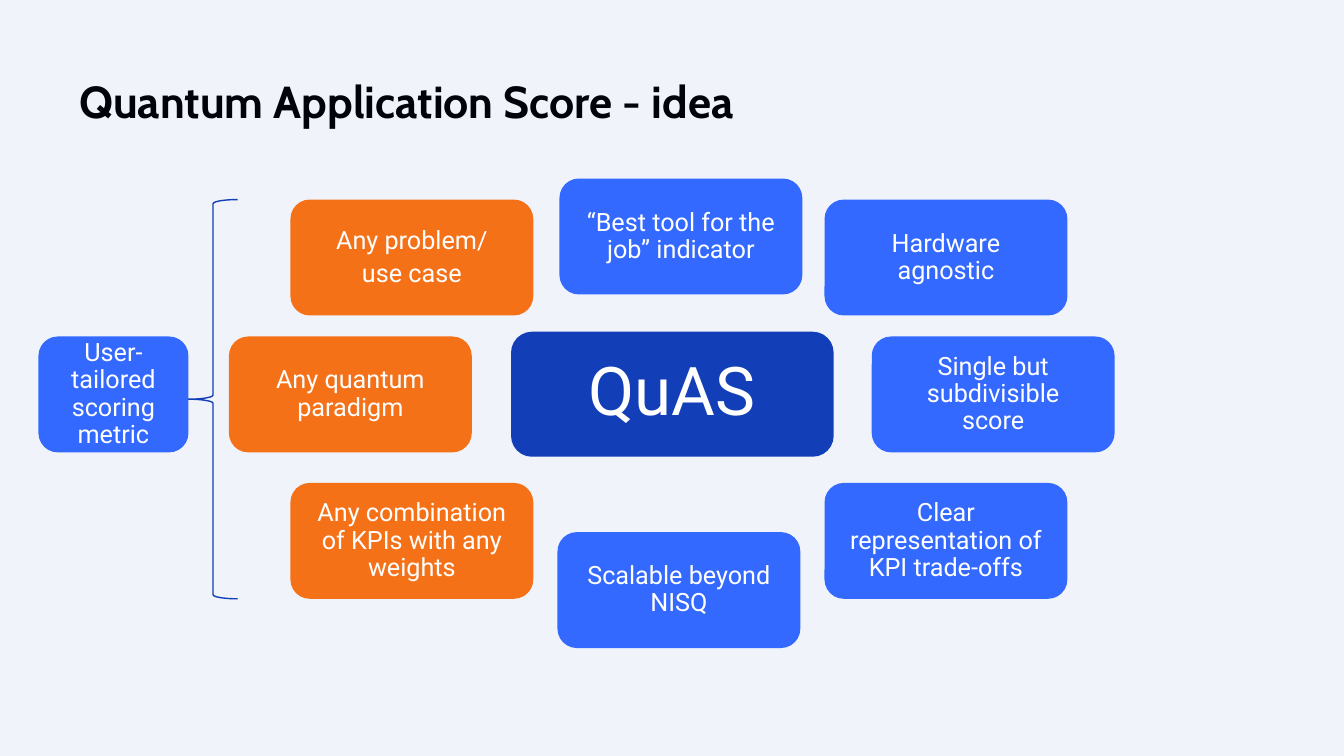
import pptx
import pptx.dml.color
import pptx.enum.shapes
import pptx.enum.text
import pptx.util

Cm = pptx.util.Cm
Pt = pptx.util.Pt
SHAPES = pptx.enum.shapes.MSO_SHAPE

BLUE, ORANGE, NAVY = "3369FF", "F57118", "123EB7"
CARD_WIDTH, CARD_HEIGHT = 6.12, 2.92
LEFT, RIGHT = 7.32, 20.78
TOP, MIDDLE, BOTTOM = 5.03, 8.48, 12.17


def color(value):
    return pptx.dml.color.RGBColor.from_string(value)


def write(box, lines, font, size, text_color, margin, bold=False):
    frame = box.text_frame
    frame.word_wrap = True
    frame.margin_left = frame.margin_right = Cm(margin)
    frame.margin_top = frame.margin_bottom = Cm(margin)
    for index, line in enumerate(lines):
        para = frame.add_paragraph() if index else frame.paragraphs[0]
        para.line_spacing = 0.9
        span = para.add_run()
        span.text = line
        span.font.name = font
        span.font.size = Pt(size)
        span.font.bold = bold
        span.font.color.rgb = color(text_color)
    return frame


deck = pptx.Presentation()
deck.slide_width, deck.slide_height = Cm(33.87), Cm(19.05)
page = deck.slides.add_slide(deck.slide_layouts[6])
page.background.fill.solid()
page.background.fill.fore_color.rgb = color("F0F3FA")

# Title
title = page.shapes.add_textbox(Cm(2), Cm(2), Cm(29.87), Cm(1.02))
write(title, ["Quantum Application Score - idea"], "Cabin", 32, "00030A", 0, True)

# Cards around the centre: lines, left, top, width, height, fill, text size
outer_cards = [
    (["Hardware agnostic"], RIGHT, TOP, BLUE),
    (["Single but subdivisible score"], 21.97, MIDDLE, BLUE),
    (["Clear representation of KPI trade-offs"], RIGHT, BOTTOM, BLUE),
    (["Scalable beyond NISQ"], 14.05, 13.41, BLUE),
    (["Any combination of KPIs with any weights"], LEFT, BOTTOM, ORANGE),
    (["Any quantum paradigm"], 5.77, MIDDLE, ORANGE),
    (["Any problem/", "use case"], LEFT, TOP, ORANGE),
    (["“Best tool for the job” indicator"], 14.1, 4.5, BLUE),
]
cards = [
    (lines, left, top, CARD_WIDTH, CARD_HEIGHT, fill, 18)
    for lines, left, top, fill in outer_cards
]
cards.append((["User-tailored scoring metric"], 0.97, MIDDLE, 3.78, CARD_HEIGHT, BLUE, 18))
cards.append((["QuAS"], 12.88, 8.36, 8.13, 3.15, NAVY, 48))

for lines, left, top, width, height, fill, size in cards:
    card = page.shapes.add_shape(
        SHAPES.ROUNDED_RECTANGLE, Cm(left), Cm(top), Cm(width), Cm(height))
    card.shadow.inherit = False
    card.fill.solid()
    card.fill.fore_color.rgb = color(fill)
    card.line.fill.background()
    frame = write(card, lines, "Roboto", size, "FFFFFF", 0.41)
    frame.vertical_anchor = pptx.enum.text.MSO_ANCHOR.MIDDLE
    for index, para in enumerate(frame.paragraphs):
        para.alignment = pptx.enum.text.PP_ALIGN.CENTER
        para.space_before = Pt(2 if index else 0)
        para.space_after = Pt(2)

# Brace joining the orange cards to the scoring metric
brace = page.shapes.add_shape(
    SHAPES.LEFT_BRACE, Cm(4.75), Cm(TOP), Cm(1.24), Cm(BOTTOM + CARD_HEIGHT - TOP))
brace.shadow.inherit = False
brace.fill.background()
brace.line.color.rgb = color(NAVY)
brace.line.width = Pt(1)

deck.save("out.pptx")
